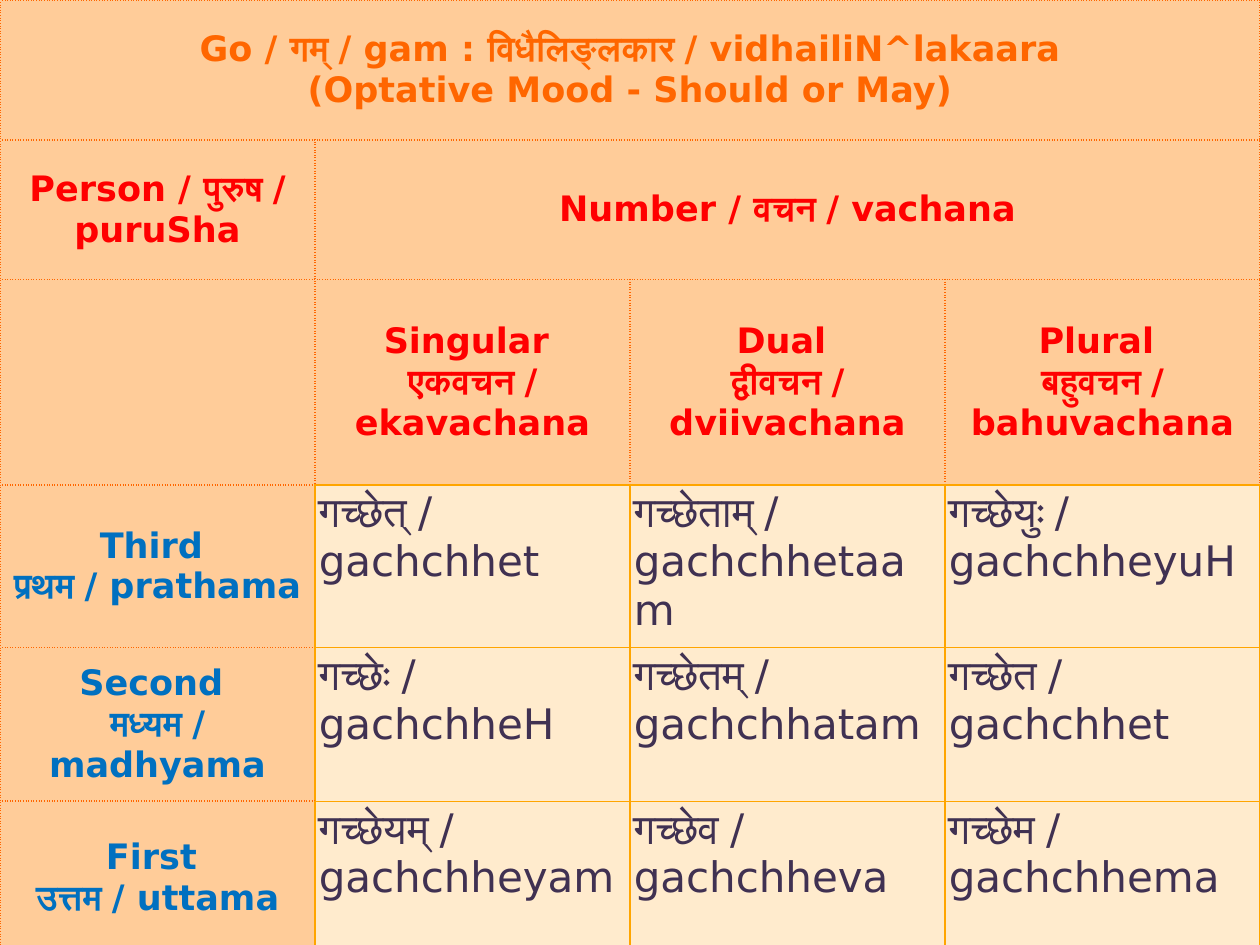
from dataclasses import dataclass

from lxml.etree import SubElement
from pptx import Presentation
from pptx.dml.color import RGBColor
from pptx.enum.text import MSO_ANCHOR, PP_ALIGN
from pptx.oxml.ns import qn
from pptx.util import Inches, Pt


@dataclass(frozen=True)
class Theme:
    face: str = "DejaVu Sans"
    label: int = 20
    verb: int = 24
    title: str = "FF6600"
    head: str = "FF0000"
    person: str = "0070C0"
    form: str = "403152"
    peach: str = "FFCC99"
    cream: str = "FFEBCD"
    dots: str = "FF6600"
    rule: str = "FFA500"


theme = Theme()
HEADS = 3

# A vertical tab marks a line break inside a paragraph.
rows = [
    ["Go / गम् / gam : विधैलिङ्लकार / vidhailiN^lakaara\v"
     "(Optative Mood - Should or May)", "", "", ""],
    ["Person / पुरुष / puruSha", "Number / वचन / vachana", "", ""],
    ["", "Singular \vएकवचन / ekavachana", "Dual \vद्वीवचन / dviivachana",
     "Plural \vबहुवचन / bahuvachana"],
    ["Third \vप्रथम / prathama", "गच्छेत् / gachchhet",
     "गच्छेताम् / gachchhetaam", "गच्छेयुः / gachchheyuH"],
    ["Second \vमध्यम / madhyama", "गच्छेः / gachchheH",
     "गच्छेतम् / gachchhatam", "गच्छेत / gachchhet"],
    ["First \vउत्तम / uttama", "गच्छेयम् / gachchheyam",
     "गच्छेव / gachchheva", "गच्छेम / gachchhema"],
]
heights = [1.11, 1.11, 1.63, 1.29, 1.22, 1.22]
last = len(rows) - 1


def add_edge(cell, side, dotted):
    color, width = (theme.dots, 1) if dotted else (theme.rule, 0.75)
    line = SubElement(cell._tc.get_or_add_tcPr(), qn(f"a:ln{side}"),
                      w=str(Pt(width)))
    fill = SubElement(line, qn("a:solidFill"))
    SubElement(fill, qn("a:srgbClr"), val=color)
    SubElement(line, qn("a:prstDash"), val="dot" if dotted else "solid")


deck = Presentation()
deck.slide_width, deck.slide_height = Inches(10), Inches(7.5)
slide = deck.slides.add_slide(deck.slide_layouts[6])

table = slide.shapes.add_table(len(rows), 4, 0, 0, Inches(10),
                               Inches(sum(heights))).table
table.first_row = table.horz_banding = False
for col in table.columns:
    col.width = Inches(2.5)
for row, height in zip(table.rows, heights):
    row.height = Inches(height)
table.cell(0, 0).merge(table.cell(0, 3))
table.cell(1, 1).merge(table.cell(1, 3))

for r, texts in enumerate(rows):
    for c, text in enumerate(texts):
        cell = table.cell(r, c)
        body = r >= HEADS and c > 0

        # Edges that touch the verb forms or close the persons are solid.
        solid = {
            "L": body,
            "R": r >= HEADS,
            "T": body,
            "B": body or r == last or (r == HEADS - 1 and c > 0),
        }
        for side, plain in solid.items():
            add_edge(cell, side, not plain)
        cell.fill.solid()
        cell.fill.fore_color.rgb = RGBColor.from_string(
            theme.cream if body else theme.peach)

        cell.margin_left = cell.margin_right = Inches(0.03)
        cell.margin_top = cell.margin_bottom = Inches(0.03 if body else 0.01)
        cell.vertical_anchor = MSO_ANCHOR.TOP if body else MSO_ANCHOR.MIDDLE
        if not text:
            continue

        if body:
            color = theme.form
        elif r >= HEADS:
            color = theme.person
        else:
            color = theme.head if r else theme.title
        cell.text = text
        para = cell.text_frame.paragraphs[0]
        para.alignment = PP_ALIGN.LEFT if body else PP_ALIGN.CENTER
        font = para.font
        font.name = theme.face
        font.size = Pt(theme.verb if body else theme.label)
        font.bold = not body
        font.color.rgb = RGBColor.from_string(color)

deck.save("out.pptx")
